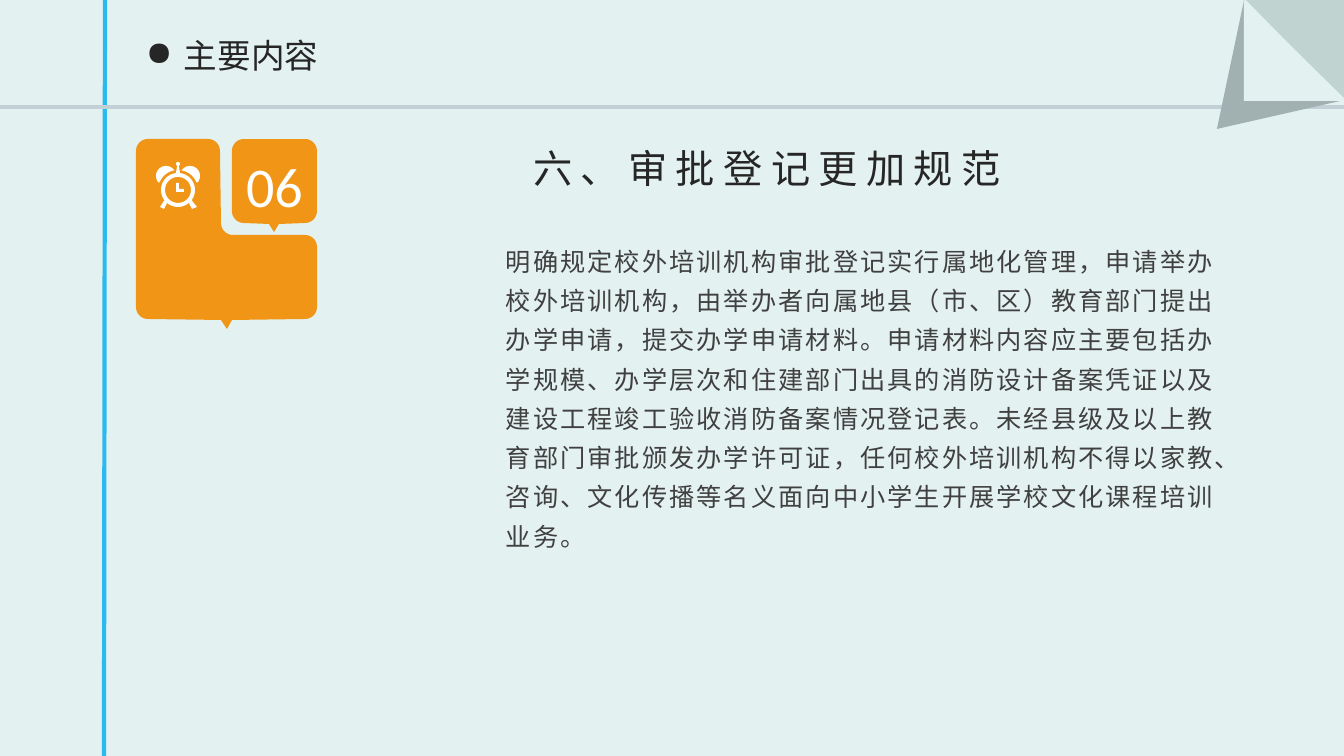
import math

import pptx
import pptx.dml.color
import pptx.enum.shapes
import pptx.enum.text
import pptx.oxml.xmlchemy
import pptx.util

RGBColor = pptx.dml.color.RGBColor
OxmlElement = pptx.oxml.xmlchemy.OxmlElement
ALIGN = pptx.enum.text.PP_ALIGN
PALE = RGBColor(0xE3, 0xF1, 0xF0)
BLUE = RGBColor(0x2B, 0xBA, 0xEF)
RULE = RGBColor(0xC3, 0xD1, 0xD7)
FOLD_LIGHT = RGBColor(0xC1, 0xD3, 0xD1)
FOLD_DARK = RGBColor(0xA1, 0xB1, 0xB2)
ORANGE = RGBColor(0xF0, 0x95, 0x15)
WHITE = RGBColor(0xFF, 0xFF, 0xFF)
HEADING = RGBColor(0x26, 0x26, 0x26)
BODY = RGBColor(0x40, 0x40, 0x40)
CJK = "Noto Sans CJK SC"
PX = 12192000 / 1344


def arc(x, y, radius, start, end):
    """Points on a circle, in px; angles in degrees, clockwise from the right."""
    steps = math.ceil(abs(end - start) / 9)
    angles = [math.radians(start + (end - start) * i / steps) for i in range(steps + 1)]
    return [(x + radius * math.cos(a), y + radius * math.sin(a)) for a in angles]


def add_outline(contours, color):
    """Draw closed contours, given in px, as one filled shape."""
    contours = [[(x * PX, y * PX) for x, y in contour] for contour in contours]
    builder = page.shapes.build_freeform(*contours[0][0], scale=1.0)
    for index, contour in enumerate(contours):
        if index:
            builder.move_to(*contour[0])
        builder.add_line_segments(contour[1:], close=True)
    shape = builder.convert_to_shape()
    shape.shadow.inherit = False
    shape.fill.solid()
    shape.fill.fore_color.rgb = color
    shape.line.fill.background()
    return shape


deck = pptx.Presentation()
deck.slide_width = round(1344 * PX)
deck.slide_height = round(756 * PX)
page = deck.slides.add_slide(deck.slide_layouts[6])
page.background.fill.solid()
page.background.fill.fore_color.rgb = PALE

# Margin line and header rule
for ends, color, width in [
    ((105, 0, 104, 756), BLUE, 3),
    ((0, 107, 1344, 107), RULE, 2.25),
]:
    line = page.shapes.add_connector(
        pptx.enum.shapes.MSO_CONNECTOR.STRAIGHT, *[round(v * PX) for v in ends])
    line.line.color.rgb = color
    line.line.width = pptx.util.Pt(width)
    line._element.spPr.append(OxmlElement("a:effectLst"))

# Folded page corner
for points, color in [
    ([(1244, -2), (1345, -2), (1344, 100)], FOLD_LIGHT),
    ([(1245, -4), (1217, 129), (1349, 99), (1245, 100)], FOLD_DARK),
    ([(1244, 0), (1244, 101), (1347, 101)], PALE),
]:
    add_outline([points], color)

# Orange badge: L-shaped panel and number card
panel = (arc(148, 151, 12, 180, 270) + arc(208, 151, 12, 270, 360)
         + arc(233, 223, 12, 180, 90) + arc(305, 247, 12, 270, 360)
         + arc(305, 307, 12, 0, 90) + [(232, 320), (227, 329), (221, 320)]
         + arc(148, 307, 12, 90, 180))
add_outline([panel], ORANGE)
number_card = (arc(244, 151, 12, 180, 270) + arc(305, 151, 12, 270, 360)
               + arc(305, 211, 12, 0, 90) + [(279, 224), (274, 232), (269, 224)]
               + arc(244, 211, 12, 90, 180))
card = add_outline([number_card], ORANGE)

# Alarm clock
clock_body = (arc(178, 190, 17, -83, 37) + [(197, 207), (192, 209)]
              + arc(178, 190, 17, 50, 130) + [(164, 209), (160, 207)]
              + arc(178, 190, 17, 143, 263) + arc(178, 164, 2, 115, 425))
clock_face = arc(178, 190, 13, 360, 0)
hands = [(176, 183), (179, 183), (179, 189), (184, 189), (184, 192), (176, 192)]
left_bell = arc(166, 176, 10, 140, 325) + arc(178, 190, 20, 260, 202)
right_bell = [(356 - x, y) for x, y in left_bell]
add_outline([clock_body, clock_face, hands, left_bell, right_bell], WHITE)

# Text
heading, title, body = [
    page.shapes.add_textbox(*[round(v * PX) for v in area])
    for area in [(136, 30, 360, 50), (519, 139, 496, 57), (496, 232, 753, 328)]
]
for box in (heading, title, body):
    box.text_frame.word_wrap = box is not title
    box.text_frame.auto_size = pptx.enum.text.MSO_AUTO_SIZE.SHAPE_TO_FIT_TEXT
card.text_frame.vertical_anchor = pptx.enum.text.MSO_ANCHOR.MIDDLE

body_text = (
    "明确规定校外培训机构审批登记实行属地化管理，申请举办校外培训机构，"
    "由举办者向属地县（市、区）教育部门提出办学申请，提交办学申请材料。"
    "申请材料内容应主要包括办学规模、办学层次和住建部门出具的消防设计备案凭证"
    "以及建设工程竣工验收消防备案情况登记表。未经县级及以上教育部门审批颁发办学许可证，"
    "任何校外培训机构不得以家教、咨询、文化传播等名义面向中小学生开展学校文化课程培训业务。"
)
for box, text, size, font, color, align, spacing in [
    (heading, "主要内容", 24, CJK, HEADING, ALIGN.LEFT, 0),
    (card, "06", 40, "Calibri", WHITE, ALIGN.CENTER, 0),
    (title, "六、审批登记更加规范", 28, CJK, HEADING, ALIGN.CENTER, 600),
    (body, body_text, 18, CJK, BODY, ALIGN.LEFT, 150),
]:
    para = box.text_frame.paragraphs[0]
    para.alignment = align
    span = para.add_run()
    span.text = text
    span.font.size = pptx.util.Pt(size)
    span.font.name = font
    span.font.color.rgb = color
    properties = span._r.get_or_add_rPr()
    properties.set("spc", str(spacing))
    east_asian = OxmlElement("a:ea")
    east_asian.set("typeface", font)
    properties.append(east_asian)
body.text_frame.paragraphs[0].line_spacing = 1.3

bullet_properties = heading.text_frame.paragraphs[0]._p.get_or_add_pPr()
bullet_properties.set("marL", str(round(38 * PX)))
bullet_properties.set("indent", str(round(-38 * PX)))
bullet = OxmlElement("a:buChar")
bullet.set("char", "●")
bullet_properties.append(bullet)

deck.save("out.pptx")
